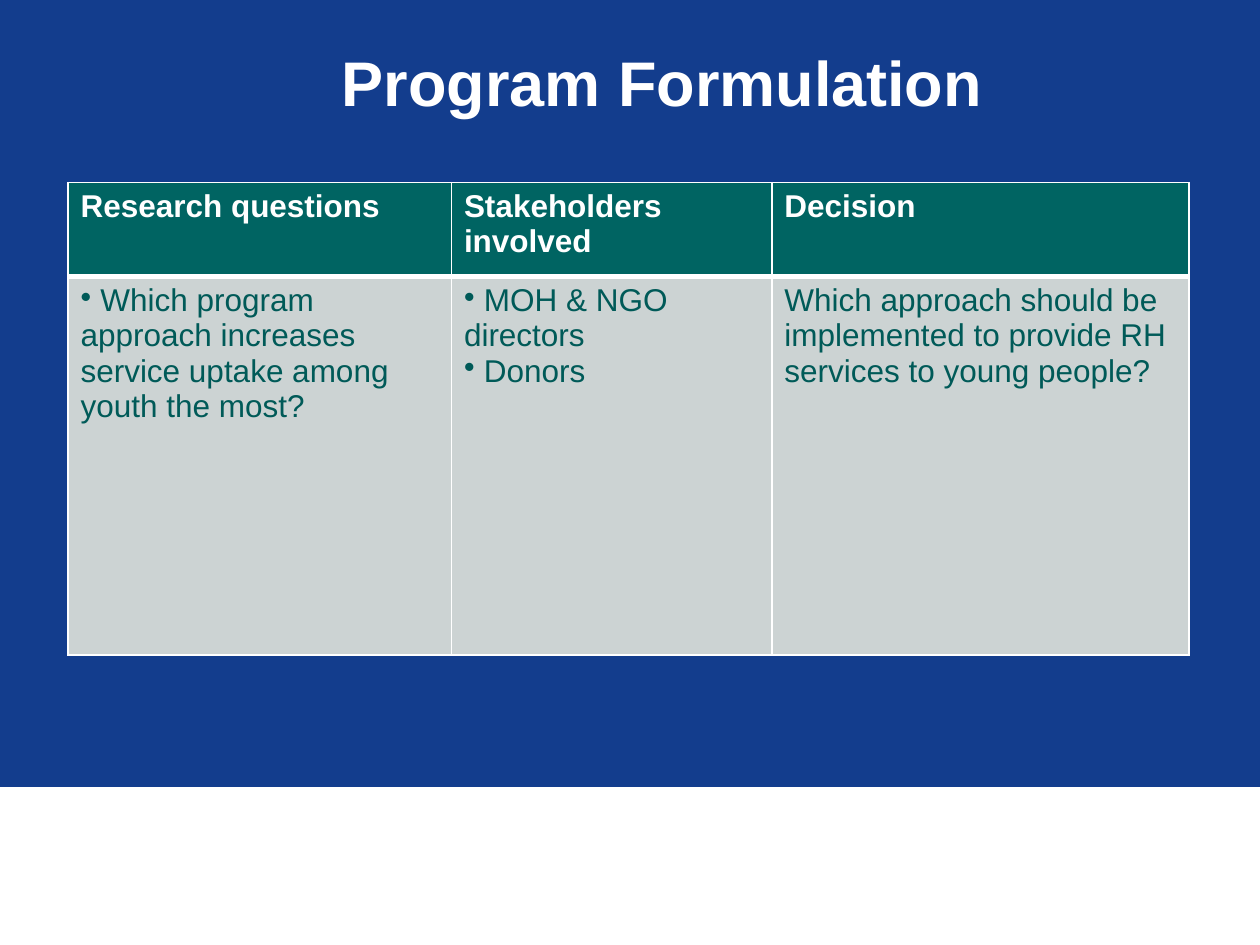
from lxml.etree import SubElement
from pptx import Presentation
from pptx.dml.color import RGBColor
from pptx.enum.shapes import MSO_SHAPE as Shape
from pptx.enum.text import MSO_ANCHOR as Anchor, PP_ALIGN as Align
from pptx.oxml.ns import qn
from pptx.util import Cm, Pt

BLUE = RGBColor(0x13, 0x3D, 0x8D)
WHITE = RGBColor(0xFF, 0xFF, 0xFF)
TEAL = RGBColor(0x00, 0x64, 0x62)
DARK_TEAL = RGBColor(0x00, 0x5A, 0x58)
GREY = RGBColor(0xCC, 0xD3, 0xD3)

BULLET = "•"
HEADINGS = ["Research questions", "Stakeholders involved", "Decision"]
ANSWERS = [
    ["• Which program approach increases service uptake among youth the most?"],
    ["• MOH & NGO directors", "• Donors"],
    ["Which approach should be implemented to provide RH services to young people?"],
]
COLUMN_WIDTHS = [Cm(7.73), Cm(6.46), Cm(8.41)]
ROW_HEIGHTS = [Cm(1.9), Cm(7.62)]


def style_font(paragraph, size, color, bold):
    """Set the font of a whole paragraph."""
    font = paragraph.font
    font.name, font.size, font.bold = "Arial", Pt(size), bold
    font.color.rgb = color


def add_footer_band(slide):
    """Draw the white band at the foot of the slide."""
    band = slide.shapes.add_shape(Shape.RECTANGLE, 0, Cm(15.88), Cm(25.4), Cm(3.17))
    band.shadow.inherit = False
    band.fill.solid()
    band.fill.fore_color.rgb = WHITE
    band.line.color.rgb = WHITE
    band.line.width = Pt(0.75)


def add_title(slide, text):
    """Write the centred slide title."""
    title = slide.shapes.add_textbox(Cm(2.57), Cm(0.76), Cm(21.56), Cm(3.18))
    frame = title.text_frame
    frame.word_wrap = True
    frame.vertical_anchor = Anchor.TOP
    heading = frame.paragraphs[0]
    heading.text = text
    heading.alignment = Align.CENTER
    style_font(heading, 36, WHITE, True)


def set_borders(cell, top, bottom):
    """Give a cell white borders, with top and bottom widths in points."""
    properties = cell._tc.get_or_add_tcPr()
    for side, width in (("L", 1), ("R", 1), ("T", top), ("B", bottom)):
        border = SubElement(properties, qn(f"a:ln{side}"), w=str(Pt(width)))
        fill = SubElement(border, qn("a:solidFill"))
        SubElement(fill, qn("a:srgbClr"), val=str(WHITE))


def add_bullet(paragraph):
    """Put a bullet in line with the left edge of the paragraph."""
    properties = paragraph._p.get_or_add_pPr()
    properties.set("marL", "0")
    properties.set("indent", "0")
    SubElement(properties, qn("a:buChar"), char=BULLET)


def fill_cell(cell, lines, background, color, bold):
    """Write lines into a cell, turning leading bullet marks into bullets."""
    cell.fill.solid()
    cell.fill.fore_color.rgb = background
    frame = cell.text_frame
    for index, line in enumerate(lines):
        paragraph = frame.add_paragraph() if index else frame.paragraphs[0]
        paragraph.text = line.removeprefix(BULLET)
        if line.startswith(BULLET):
            add_bullet(paragraph)
        style_font(paragraph, 18, color, bold)


def add_decision_table(slide):
    """Build the table of questions, stakeholders and decisions."""
    table = slide.shapes.add_table(
        len(ROW_HEIGHTS), len(COLUMN_WIDTHS), Cm(1.37), Cm(3.68),
        sum(COLUMN_WIDTHS), sum(ROW_HEIGHTS)).table
    for row, height in zip(table.rows, ROW_HEIGHTS):
        row.height = height
    for index, (heading, answer) in enumerate(zip(HEADINGS, ANSWERS)):
        table.columns[index].width = COLUMN_WIDTHS[index]
        header, body = table.cell(0, index), table.cell(1, index)
        set_borders(header, 1, 3)
        set_borders(body, 3, 1)
        fill_cell(header, [heading], TEAL, WHITE, True)
        fill_cell(body, answer, GREY, DARK_TEAL, False)


def main():
    """Build and save the slide."""
    deck = Presentation()
    deck.slide_width, deck.slide_height = Cm(25.4), Cm(19.05)
    slide = deck.slides.add_slide(deck.slide_layouts[6])
    slide.background.fill.solid()
    slide.background.fill.fore_color.rgb = BLUE
    add_footer_band(slide)
    add_title(slide, "Program Formulation")
    add_decision_table(slide)
    deck.save("out.pptx")


if __name__ == "__main__":
    main()
